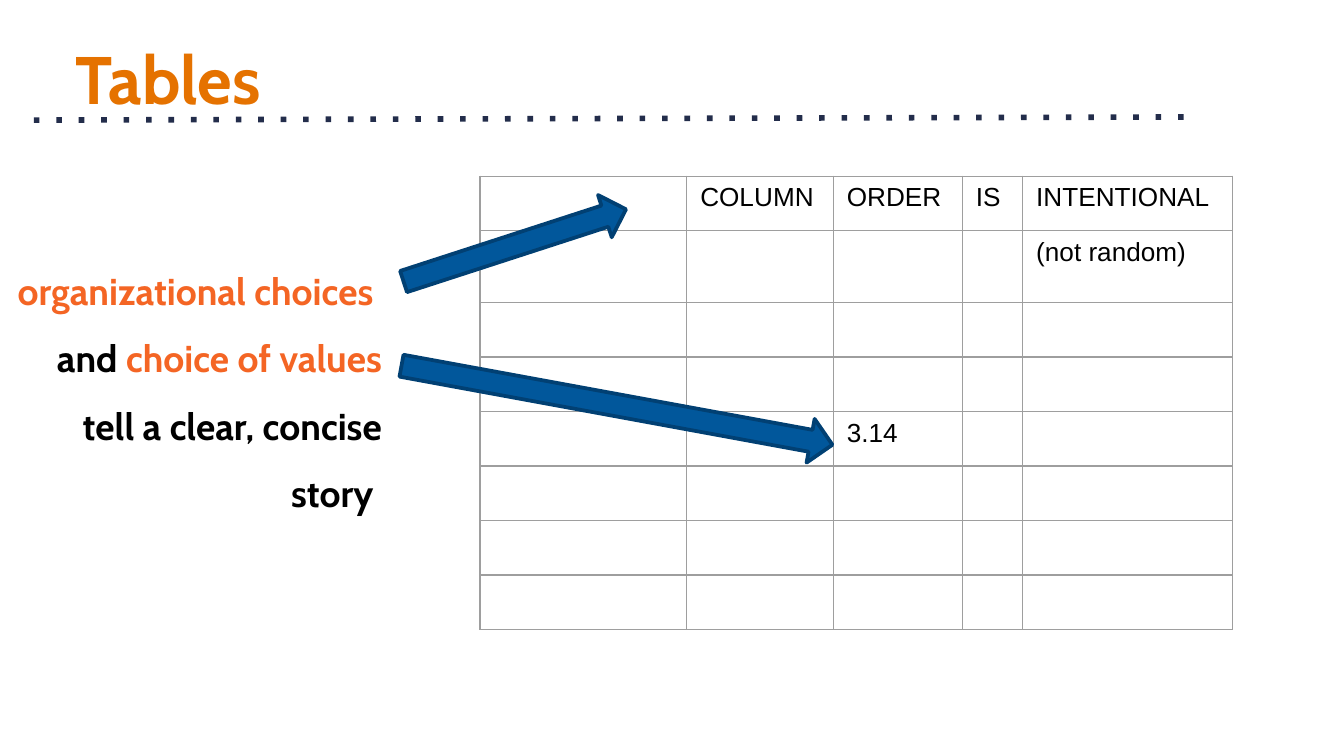
"""Build a slide on how the layout of a table tells a story."""
from lxml import etree
from pptx import Presentation
from pptx.dml.color import RGBColor
from pptx.enum import shapes, text
from pptx.oxml import ns
from pptx.util import Cm, Pt

COLOURS = {
    "title": "E57200", "rule": "232D4B", "accent": "F46524", "body": "000000",
    "border": "9E9E9E", "arrow": "01579B", "outline": "014073",
}
COLUMN_WIDTHS = [3.91, 2.77, 2.44, 1.14, 3.96]
ROW_HEIGHTS = [1.03, 1.36] + [1.03] * 6
CELL_TEXTS = {
    (0, 1): "COLUMN", (0, 2): "ORDER", (0, 3): "IS", (0, 4): "INTENTIONAL",
    (1, 4): "(not random)", (4, 2): "3.14",
}
MESSAGE = [
    [("organizational choices ", "accent")],
    [("and ", "body"), ("choice of values", "accent")],
    [("tell a clear, concise story ", "body")],
]
ARROWS = [(7.52, 4.22, 4.42, 0.84, 342), (7.52, 7.24, 8.28, 0.84, 10.4)]


def colour(name):
    """Return the named colour."""
    return RGBColor.from_string(COLOURS[name])


def apply(target, values):
    """Set each attribute of target from a dict."""
    for name, value in values.items():
        setattr(target, name, value)


def add_run(paragraph, words, size, font, colour_name, bold=False):
    """Add a formatted run to a paragraph."""
    run = paragraph.add_run()
    run.text = words
    apply(run.font, {"size": Pt(size), "name": font, "bold": bold})
    run.font.color.rgb = colour(colour_name)


def format_frame(frame, anchor):
    """Give a text frame its margins, wrapping and anchor."""
    sides = ("left", "top", "right", "bottom")
    values = {f"margin_{side}": Cm(0.25) for side in sides}
    apply(frame, {**values, "word_wrap": True, "vertical_anchor": anchor})


def add_title(slide, words):
    """Place and fill the title placeholder."""
    title = slide.shapes.title
    apply(title, {"left": Cm(1.17), "top": Cm(0.46), "width": Cm(23.09), "height": Cm(1.75)})
    format_frame(title.text_frame, text.MSO_ANCHOR.TOP)
    title.text_frame.auto_size = text.MSO_AUTO_SIZE.NONE
    paragraph = title.text_frame.paragraphs[0]
    paragraph.alignment = text.PP_ALIGN.LEFT
    add_run(paragraph, words, 36, "Cabin", "title", True)


def add_dotted_rule(slide):
    """Draw the dotted line under the title."""
    rule = slide.shapes.add_connector(
        shapes.MSO_CONNECTOR.STRAIGHT, Cm(0.64), Cm(2.27), Cm(22.63), Cm(2.21))
    rule.line.width = Pt(3)
    rule.line.color.rgb = colour("rule")
    dash = etree.SubElement(rule.line._get_or_add_ln(), ns.qn("a:prstDash"))
    dash.set("val", "dot")
    etree.SubElement(rule._element.spPr, ns.qn("a:effectLst"))


def add_borders(cell):
    """Draw a thin border on all sides of a cell."""
    properties = cell._tc.get_or_add_tcPr()
    for side in ("lnL", "lnR", "lnT", "lnB"):
        line = etree.SubElement(properties, ns.qn(f"a:{side}"), w=str(Pt(0.75)))
        fill = etree.SubElement(line, ns.qn("a:solidFill"))
        etree.SubElement(fill, ns.qn("a:srgbClr"), val=COLOURS["border"])


def add_grid(slide):
    """Add the example table."""
    table = slide.shapes.add_table(
        len(ROW_HEIGHTS), len(COLUMN_WIDTHS), Cm(9.07), Cm(3.33),
        Cm(sum(COLUMN_WIDTHS)), Cm(sum(ROW_HEIGHTS))).table
    apply(table, {"first_row": False, "horz_banding": False})
    for column, width in zip(table.columns, COLUMN_WIDTHS):
        column.width = Cm(width)
    for row, height in zip(table.rows, ROW_HEIGHTS):
        row.height = Cm(height)
    for cell in table.iter_cells():
        add_borders(cell)
        cell.fill.background()
    for position, words in CELL_TEXTS.items():
        paragraph = table.cell(*position).text_frame.paragraphs[0]
        add_run(paragraph, words, 14, "Arial", "body")


def add_message(slide):
    """Add the right-aligned message beside the table."""
    frame = slide.shapes.add_textbox(Cm(0), Cm(4.34), Cm(7.47), Cm(5.64)).text_frame
    format_frame(frame, text.MSO_ANCHOR.BOTTOM)
    for index, runs in enumerate(MESSAGE):
        paragraph = frame.add_paragraph() if index else frame.paragraphs[0]
        apply(paragraph, {"alignment": text.PP_ALIGN.RIGHT, "line_spacing": 1.5})
        for words, colour_name in runs:
            add_run(paragraph, words, 20, "Cabin", colour_name, True)


def add_arrow(slide, left, top, width, height, rotation):
    """Add a rotated block arrow."""
    arrow = slide.shapes.add_shape(
        shapes.MSO_SHAPE.RIGHT_ARROW, Cm(left), Cm(top), Cm(width), Cm(height))
    arrow.rotation = rotation
    arrow.shadow.inherit = False
    arrow.fill.solid()
    arrow.fill.fore_color.rgb = colour("arrow")
    arrow.line.width = Pt(2)
    arrow.line.color.rgb = colour("outline")


def main():
    """Build and save the presentation."""
    presentation = Presentation()
    apply(presentation, {"slide_width": Cm(25.4), "slide_height": Cm(14.29)})
    slide = presentation.slides.add_slide(presentation.slide_layouts[5])
    add_dotted_rule(slide)
    add_title(slide, "Tables")
    add_grid(slide)
    add_message(slide)
    for arrow in ARROWS:
        add_arrow(slide, *arrow)
    presentation.save("out.pptx")


if __name__ == "__main__":
    main()
